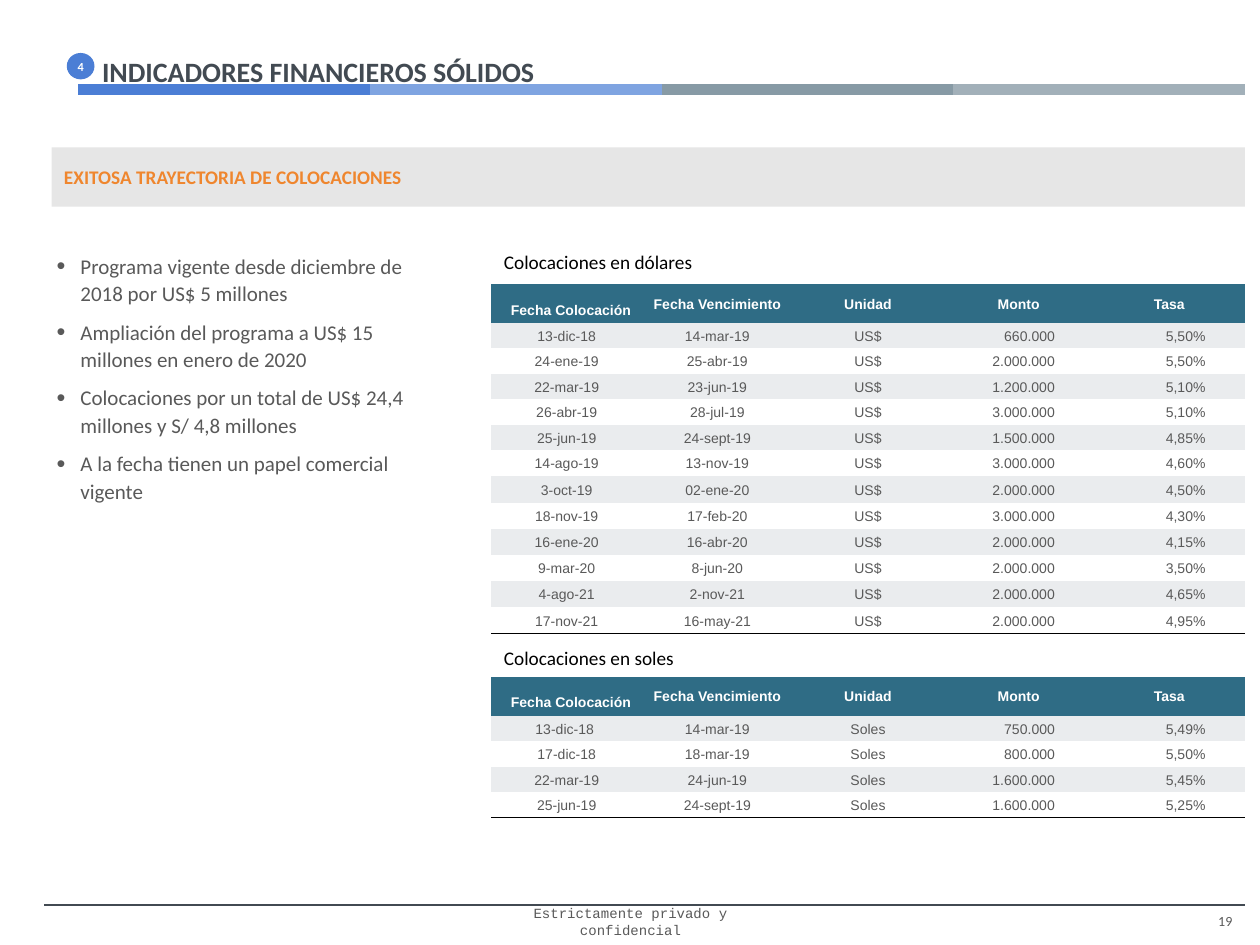
from collections import namedtuple

from lxml import etree
from pptx import Presentation
from pptx import util as u
from pptx.dml import color
from pptx.enum import shapes, text
from pptx.oxml import ns

# The grid: 100 columns by 75 rows of square units
COLUMNS, ROWS = 100, 75
UNIT = u.Inches(0.1)
Box = namedtuple("Box", "left top width height")

NAVY, BLUE, GREY, WHITE, BLACK = "424A52", "4B7ED5", "595959", "FFFFFF", "000000"
BAND, HEADER, STRIPE, ORANGE = "E6E6E6", "2F6C85", "EAECEE", "EF862E"
RULE_COLOURS = [BLUE, "7FA4E1", "879AA5", "A2B0B9"]
NO_TABLE_STYLE = "{2D5ABB26-0587-4C30-8999-92F81FD0307C}"
LEFT, CENTER, RIGHT = text.PP_ALIGN.LEFT, text.PP_ALIGN.CENTER, text.PP_ALIGN.RIGHT
TOP, MIDDLE, BOTTOM = text.MSO_ANCHOR.TOP, text.MSO_ANCHOR.MIDDLE, text.MSO_ANCHOR.BOTTOM

BULLETS = [
    "Programa vigente desde diciembre de 2018 por US$ 5 millones",
    "Ampliación del programa a US$ 15 millones en enero de 2020",
    "Colocaciones por un total de US$ 24,4 millones y S/ 4,8 millones",
    "A la fecha tienen un papel comercial vigente",
]
HEADINGS = ["Fecha Colocación", "Fecha Vencimiento", "Unidad", "Monto", "Tasa"]
DOLLARS = [
    ("13-dic-18", "14-mar-19", "660.000", "5,50%"),
    ("24-ene-19", "25-abr-19", "2.000.000", "5,50%"),
    ("22-mar-19", "23-jun-19", "1.200.000", "5,10%"),
    ("26-abr-19", "28-jul-19", "3.000.000", "5,10%"),
    ("25-jun-19", "24-sept-19", "1.500.000", "4,85%"),
    ("14-ago-19", "13-nov-19", "3.000.000", "4,60%"),
    ("3-oct-19", "02-ene-20", "2.000.000", "4,50%"),
    ("18-nov-19", "17-feb-20", "3.000.000", "4,30%"),
    ("16-ene-20", "16-abr-20", "2.000.000", "4,15%"),
    ("9-mar-20", "8-jun-20", "2.000.000", "3,50%"),
    ("4-ago-21", "2-nov-21", "2.000.000", "4,65%"),
    ("17-nov-21", "16-may-21", "2.000.000", "4,95%"),
]
SOLES = [
    ("13-dic-18 ", "14-mar-19", "750.000", "5,49%"),
    ("17-dic-18", "18-mar-19", "800.000", "5,50%"),
    ("22-mar-19", "24-jun-19", "1.600.000", "5,45%"),
    ("25-jun-19", "24-sept-19", "1.600.000", "5,25%"),
]


def rgb(value):
    return color.RGBColor.from_string(value)


def units(*counts):
    return [round(count * UNIT) for count in counts]


def add_element(parent, tag, **attributes):
    return etree.SubElement(parent, ns.qn(tag), attributes)


def write(paragraph, content, size=12, colour=GREY, bold=False, font="Calibri", align=LEFT):
    """Add one formatted run to a paragraph."""
    paragraph.alignment = align
    run = paragraph.add_run()
    run.text = content
    run.font.size, run.font.name, run.font.bold = u.Pt(size), font, bold
    run.font.color.rgb = rgb(colour)


def set_frame(frame, anchor=TOP, margins=(1, 0.5, 1, 0.5)):
    frame.word_wrap = True
    frame.auto_size = text.MSO_AUTO_SIZE.NONE
    frame.vertical_anchor = anchor
    (frame.margin_left, frame.margin_top,
     frame.margin_right, frame.margin_bottom) = units(*margins)
    return frame


def add_text(slide, box, content, anchor=TOP, margins=(1, 0.5, 1, 0.5), **style):
    frame = set_frame(slide.shapes.add_textbox(*units(*box)).text_frame, anchor, margins)
    write(frame.paragraphs[0], content, **style)


def add_filled(slide, kind, box, fill, content, **style):
    shape = slide.shapes.add_shape(kind, *units(*box))
    shape.shadow.inherit = False
    shape.fill.solid()
    shape.fill.fore_color.rgb = rgb(fill)
    shape.line.fill.background()
    margin = 0 if kind == shapes.MSO_SHAPE.OVAL else 1
    frame = set_frame(shape.text_frame, MIDDLE, (margin, 0, margin, 0))
    write(frame.paragraphs[0], content, bold=True, **style)


def add_rule(slide, left, right, row, colour, weight):
    line = slide.shapes.add_connector(
        shapes.MSO_CONNECTOR.STRAIGHT, *units(left, row, right, row))
    line.line.color.rgb = rgb(colour)
    line.line.width = u.Pt(weight)
    add_element(line._element.spPr, "a:effectLst")


def add_heading(slide, box):
    """Numbered title above a rule of four equal colours."""
    title = slide.shapes.title
    title.left, title.top, title.width, title.height = units(
        box.left + 0.9, box.top, box.width - 2, box.height - 0.1)
    frame = set_frame(title.text_frame, BOTTOM, (1, 0, 1, 0))
    write(frame.paragraphs[0], "INDICADORES FINANCIEROS SÓLIDOS",
          size=16, colour=NAVY, bold=True)
    step = box.width / len(RULE_COLOURS)
    for index, colour in enumerate(RULE_COLOURS):
        start = box.left + index * step
        add_rule(slide, start, start + step, box.top + box.height, colour, 6)
    add_filled(slide, shapes.MSO_SHAPE.OVAL, Box(box.left - 0.9, box.top + 2.8, 2.2, 2.1),
               BLUE, "4", size=7, colour=WHITE, align=CENTER)


def add_bullets(slide, box, items):
    frame = set_frame(slide.shapes.add_textbox(*units(*box)).text_frame)
    for index, item in enumerate(items):
        paragraph = frame.paragraphs[0] if index == 0 else frame.add_paragraph()
        paragraph.line_spacing = 1.1
        paragraph.space_before = u.Pt(6 if index else 0)
        properties = paragraph._p.get_or_add_pPr()
        indent = units(1.9)[0]
        properties.set("marL", str(indent))
        properties.set("indent", str(-indent))
        add_element(properties, "a:buSzPct", val="120000")
        add_element(properties, "a:buFont", typeface="Arial")
        add_element(properties, "a:buChar", char="•")
        write(paragraph, item)


def add_bottom_border(cell):
    properties = cell._tc.get_or_add_tcPr()
    border = etree.Element(ns.qn("a:lnB"), w=str(u.Pt(1)))
    fill = add_element(border, "a:solidFill")
    add_element(fill, "a:srgbClr", val=BLACK)
    properties.insert(0, border)


def fill_cell(cell, content, row, column):
    """Write a cell: header row first, then striped rows with amounts at the right."""
    amount = row > 0 and column > 2
    cell.vertical_anchor = MIDDLE
    cell.margin_left, cell.margin_top, cell.margin_right, cell.margin_bottom = units(
        0.1, 0.1, 3.1 if amount else 0.1, 0)
    if row % 2 or row == 0:
        cell.fill.solid()
        cell.fill.fore_color.rgb = rgb(STRIPE if row else HEADER)
    else:
        cell.fill.background()
    paragraph = cell.text_frame.paragraphs[0]
    if row == column == 0:
        # A large leading space lowers the first heading
        write(paragraph, " ", size=18, colour=BLACK, font="Arial", align=CENTER)
    write(paragraph, content, size=8, colour=GREY if row else WHITE, bold=row == 0,
          font="Arial", align=RIGHT if amount else CENTER)


def add_placements(slide, box, caption, currency, placements):
    """Caption over a table of placements in one currency."""
    add_text(slide, Box(box.left, box.top, 33.9, 2.9), caption, size=11, colour=BLACK)
    rows = [HEADINGS] + [(*row[:2], currency, *row[2:]) for row in placements]
    heights = [3.1 if row == 0 else 2.02 if row < 6 else 2.08 for row in range(len(rows))]
    frame = slide.shapes.add_table(
        len(rows), len(HEADINGS),
        *units(box.left, box.top + box.height - sum(heights), box.width, sum(heights)))
    table = frame.table
    table._tbl.tblPr.find(ns.qn("a:tableStyleId")).text = NO_TABLE_STYLE
    table.horz_banding = table.first_row = False
    for column in table.columns:
        column.width = units(box.width / len(HEADINGS))[0]
    for row, values in enumerate(rows):
        table.rows[row].height = units(heights[row])[0]
        for column, value in enumerate(values):
            cell = table.cell(row, column)
            fill_cell(cell, value, row, column)
            if row == len(rows) - 1:
                add_bottom_border(cell)


def add_footer(slide, box):
    add_rule(slide, box.left, box.left + box.width, box.top, NAVY, 1)
    add_text(slide, Box(40, box.top + 0.7, 20.1, 1.3), "Estrictamente privado y confidencial",
             MIDDLE, (0, 0, 0, 0), size=8, font="Courier New", align=CENTER)
    add_text(slide, Box(93.9, box.top - 0.5, 6.7, 3.6), "19", MIDDLE, size=8, align=CENTER)


def main():
    presentation = Presentation()
    presentation.slide_width, presentation.slide_height = units(COLUMNS, ROWS)
    slide = presentation.slides.add_slide(presentation.slide_layouts[5])

    add_footer(slide, Box(3.5, 71.8, 95.3, 3.2))
    add_heading(slide, Box(6.2, 1.4, 92.6, 5.7))
    add_filled(slide, shapes.MSO_SHAPE.RECTANGLE, Box(4.1, 11.7, 94.7, 4.7), BAND,
               "EXITOSA TRAYECTORIA DE COLOCACIONES", size=11, colour=ORANGE)
    add_bullets(slide, Box(3.5, 19.4, 31.5, 21.2), BULLETS)
    add_placements(slide, Box(39, 19.4, 59.8, 30.9), "Colocaciones en dólares", "US$", DOLLARS)
    add_placements(slide, Box(39, 50.8, 59.8, 14.1), "Colocaciones en soles", "Soles", SOLES)

    presentation.save("out.pptx")


if __name__ == "__main__":
    main()
